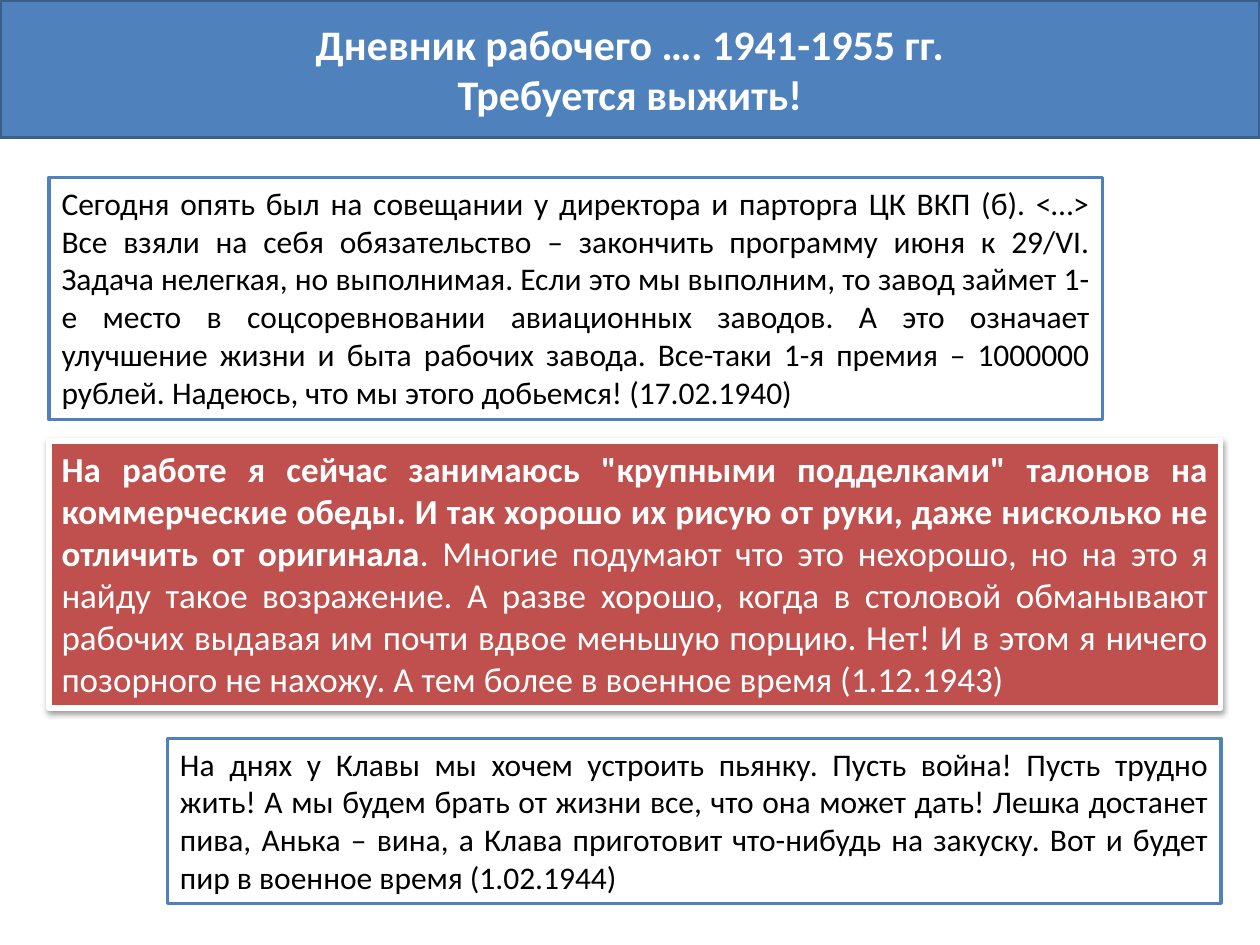
from dataclasses import dataclass

from lxml.etree import SubElement
from pptx import Presentation
from pptx.dml.color import RGBColor
from pptx.enum.shapes import MSO_SHAPE
from pptx.enum.text import MSO_ANCHOR, MSO_AUTO_SIZE, PP_ALIGN
from pptx.oxml.ns import qn
from pptx.util import Inches, Pt


@dataclass(frozen=True)
class Theme:
    font: str = "Calibri"
    blue: str = "4F81BD"
    dark_blue: str = "3A5F8C"
    red: str = "C0504D"
    white: str = "FFFFFF"
    black: str = "000000"
    title_size: int = 24
    accent_size: int = 20
    body_size: int = 18
    line: int = 2
    accent_line: int = 3


THEME = Theme()
WIDTH, HEIGHT = 10, 7.5

# Margins and entry edges on the slide, in inches
LEFT, RIGHT = 0.39, 9.69
ENTRY_WIDTH = 8.36

TITLE = ["Дневник рабочего …. 1941-1955 гг.", "Требуется выжить!"]
PLAN_ENTRY = (
    "Сегодня опять был на совещании у директора и парторга ЦК ВКП (б). <…> "
    "Все взяли на себя обязательство – закончить программу июня к 29/VI. "
    "Задача нелегкая, но выполнимая. Если это мы выполним, то завод займет "
    "1-е место в соцсоревновании авиационных заводов. А это означает "
    "улучшение жизни и быта рабочих завода. Все-таки 1-я премия – 1000000 "
    "рублей. Надеюсь, что мы этого добьемся! (17.02.1940)"
)
COUPON_LEAD = (
    'На работе я сейчас занимаюсь "крупными подделками" талонов на '
    "коммерческие обеды. И так хорошо их рисую от руки, даже нисколько не "
    "отличить от оригинала"
)
COUPON_REST = (
    ". Многие подумают что это нехорошо, но на это я найду такое возражение. "
    "А разве хорошо, когда в столовой обманывают рабочих выдавая им почти "
    "вдвое меньшую порцию. Нет! И в этом я ничего позорного не нахожу. "
    "А тем более в военное время (1.12.1943)"
)
PARTY_ENTRY = (
    "На днях у Клавы мы хочем устроить пьянку. Пусть война! Пусть трудно "
    "жить! А мы будем брать от жизни все, что она может дать! Лешка достанет "
    "пива, Анька – вина, а Клава приготовит что-нибудь на закуску. Вот и "
    "будет пир в военное время (1.02.1944)"
)


def paint(shape, fill, line, width):
    shape.fill.solid()
    shape.fill.fore_color.rgb = RGBColor.from_string(fill)
    shape.line.color.rgb = RGBColor.from_string(line)
    shape.line.width = Pt(width)
    shape.shadow.inherit = False


def style(span, size, color, bold=False):
    span.font.name = THEME.font
    span.font.size = Pt(size)
    span.font.bold = bold
    span.font.color.rgb = RGBColor.from_string(color)


def add_soft_shadow(shape):
    effects = shape._element.spPr.find(qn("a:effectLst"))
    shadow = SubElement(effects, qn("a:outerShdw"), blurRad=str(Pt(3.1)),
                        dist=str(Pt(1.6)), dir="5400000", rotWithShape="0")
    color = SubElement(shadow, qn("a:srgbClr"), val=THEME.black)
    SubElement(color, qn("a:alpha"), val="38000")


def place_title(slide, box):
    title = slide.shapes.title
    title.left, title.top, title.width, title.height = map(Inches, box)
    paint(title, THEME.blue, THEME.dark_blue, THEME.line)
    frame = title.text_frame
    frame.text = "\n".join(TITLE)
    frame.auto_size = MSO_AUTO_SIZE.NONE
    frame.vertical_anchor = MSO_ANCHOR.MIDDLE
    for para in frame.paragraphs:
        para.alignment = PP_ALIGN.CENTER
        for span in para.runs:
            style(span, THEME.title_size, THEME.white, bold=True)


def place_entry(slide, box, text, lead="", accent=False):
    """Place a diary entry; an accent entry is red, larger and shadowed."""
    entry = slide.shapes.add_shape(MSO_SHAPE.RECTANGLE, *map(Inches, box))
    if accent:
        paint(entry, THEME.red, THEME.white, THEME.accent_line)
        add_soft_shadow(entry)
        size, color = THEME.accent_size, THEME.white
    else:
        paint(entry, THEME.white, THEME.blue, THEME.line)
        size, color = THEME.body_size, THEME.black
    frame = entry.text_frame
    frame.word_wrap = True
    frame.auto_size = MSO_AUTO_SIZE.SHAPE_TO_FIT_TEXT
    frame.vertical_anchor = MSO_ANCHOR.TOP
    para = frame.paragraphs[0]
    para.alignment = PP_ALIGN.JUSTIFY
    for words, bold in ((lead, True), (text, False)):
        if words:
            span = para.add_run()
            span.text = words
            style(span, size, color, bold)


def main():
    deck = Presentation()
    deck.slide_width, deck.slide_height = Inches(WIDTH), Inches(HEIGHT)
    slide = deck.slides.add_slide(deck.slide_layouts.get_by_name("Title Only"))

    # Title band across the full width
    place_title(slide, (0, 0, WIDTH, 1.09))

    # Diary entries: left-aligned, full width, right-aligned
    place_entry(slide, (LEFT, 1.41, ENTRY_WIDTH, 1.92), PLAN_ENTRY)
    place_entry(slide, (LEFT, 3.5, RIGHT - LEFT, 2.12), COUPON_REST,
                lead=COUPON_LEAD, accent=True)
    place_entry(slide, (RIGHT - ENTRY_WIDTH, 5.86, ENTRY_WIDTH, 1.31),
                PARTY_ENTRY)

    deck.save("out.pptx")


if __name__ == "__main__":
    main()
